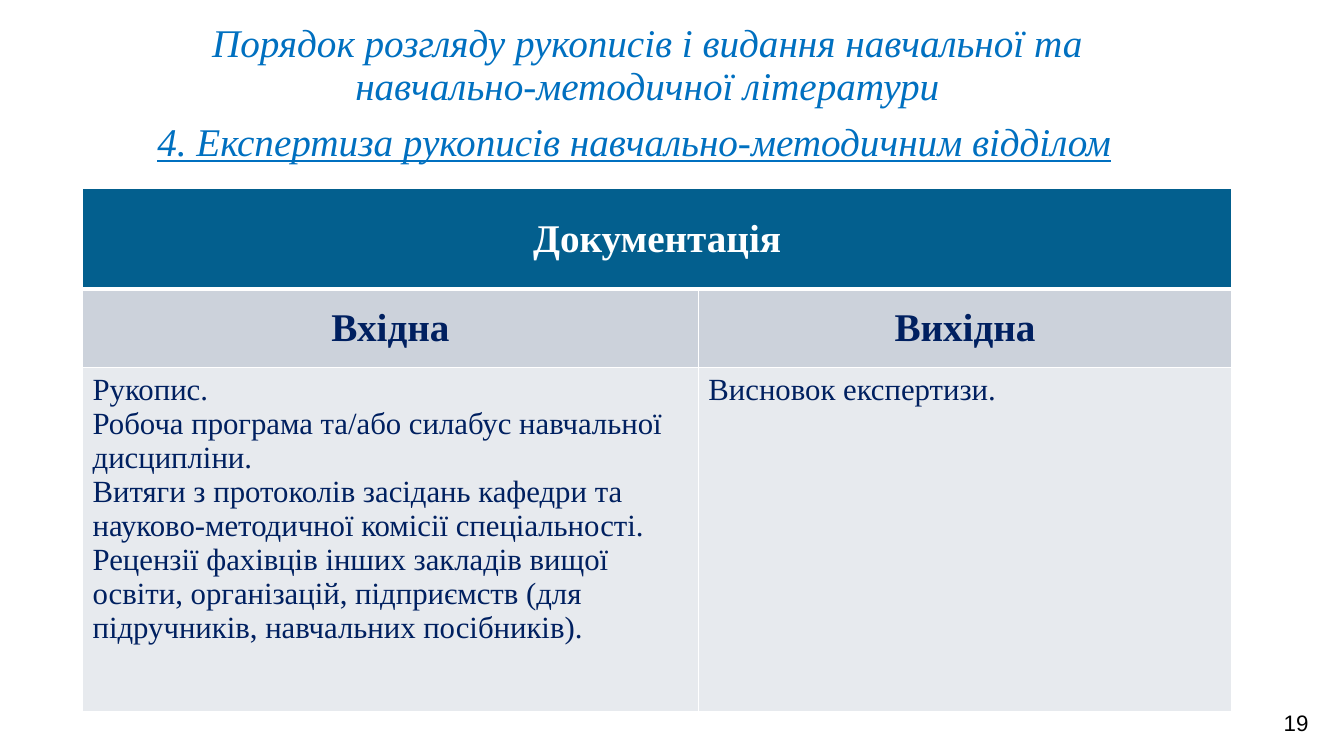
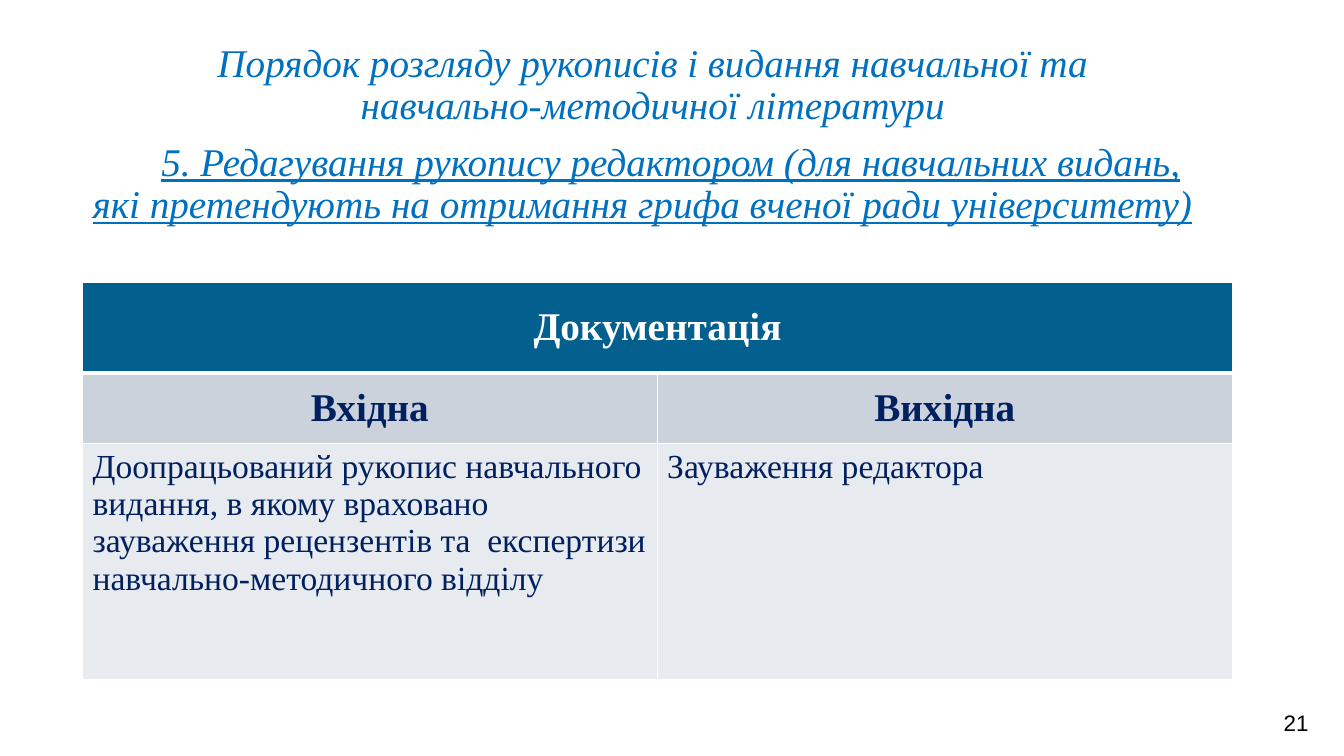
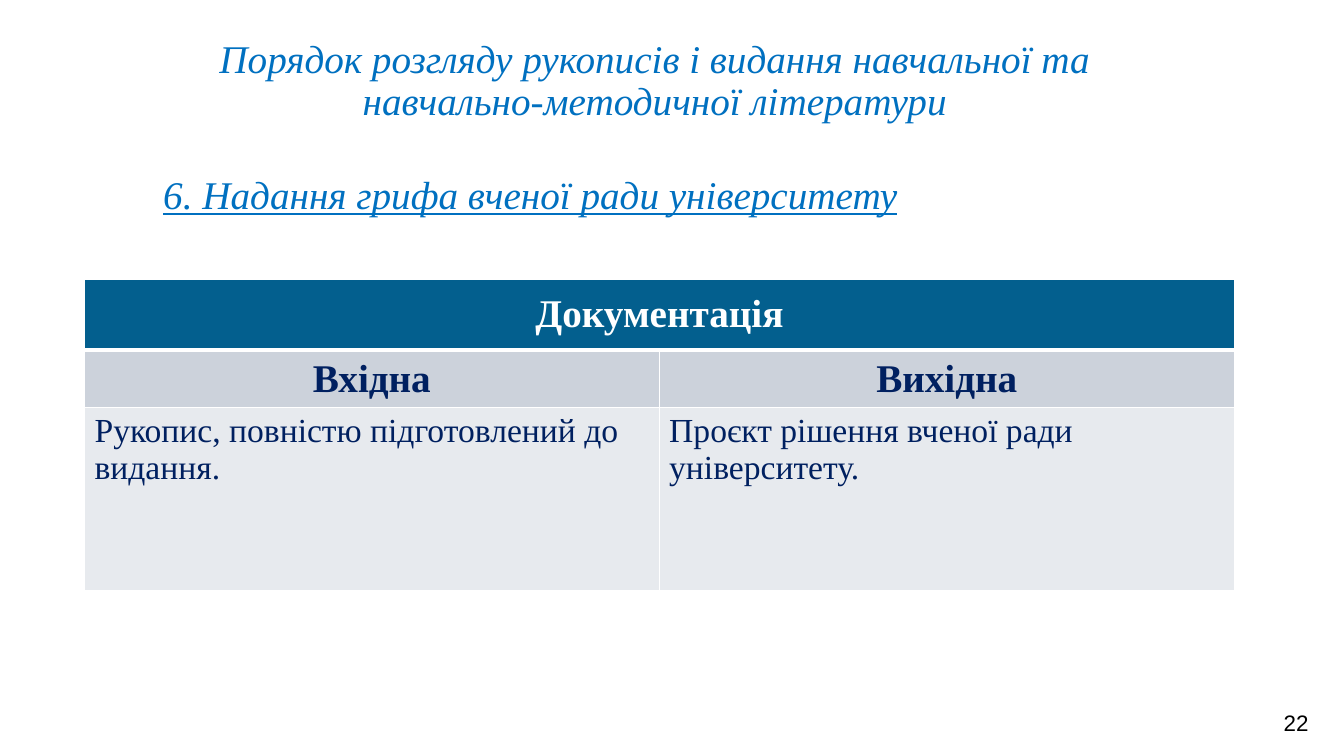
from lxml.etree import SubElement
from pptx import Presentation
from pptx.dml.color import RGBColor
from pptx.enum.text import MSO_ANCHOR, MSO_AUTO_SIZE, PP_ALIGN
from pptx.oxml.ns import qn
from pptx.util import Cm, Pt

BLUE, TEAL, NAVY, WHITE, BLACK = "0070C0", "035F8E", "002060", "FFFFFF", "000000"
ROW_FILLS = [TEAL, "CCD2DB", "E7EAEE"]
HEADING = "Порядок розгляду рукописів і видання навчальної та \vнавчально-методичної літератури "

STEPS = [
    {
        "number": "19",
        "title_box": (1.98, 0.48, 28.91, 3.99),
        "step": "4. Експертиза рукописів навчально-методичним відділом",
        "step_gap": 10,
        "table_at": (2.08, 4.75),
        "columns": [15.52, 13.44],
        "rows": [2.54, 1.98, 8.66],
        "body_size": 22,
        "incoming": [
            "Рукопис.",
            "Робоча програма та/або силабус навчальної дисципліни.",
            "Витяги з протоколів засідань кафедри та науково-методичної комісії спеціальності.",
            "Рецензії фахівців інших закладів вищої освіти, організацій, підприємств "
            "(для підручників, навчальних посібників).",
        ],
        "outgoing": ["Висновок експертизи."],
    },
    {
        "number": "21",
        "title_box": (2.08, 0.97, 28.98, 5.13),
        "step": "5. Редагування рукопису редактором (для навчальних видань, "
                "які претендують на отримання грифа вченої ради університету)",
        "step_gap": 10,
        "table_at": (2.08, 7.11),
        "columns": [14.48, 14.5],
        "rows": [2.29, 1.78, 5.94],
        "body_size": 24,
        "incoming": [
            "Доопрацьований рукопис навчального видання, в якому враховано "
            "зауваження рецензентів та  експертизи навчально-методичного відділу",
        ],
        "outgoing": ["Зауваження редактора"],
    },
    {
        "number": "22",
        "title_box": (2.13, 0.86, 28.98, 4.75),
        "step": "6. Надання грифа вченої ради університету",
        "step_gap": 37,
        "table_at": (2.13, 7.04),
        "columns": [14.48, 14.5],
        "rows": [1.78, 1.45, 4.62],
        "body_size": 24,
        "incoming": ["Рукопис, повністю підготовлений до видання."],
        "outgoing": ["Проєкт рішення вченої ради університету."],
    },
]


def write(frame, text, size=28, color=BLUE, font="Times New Roman", bold=False, italic=False,
          underline=False, align=PP_ALIGN.LEFT, spacing=1.0, before=0, indent=0):
    """Add a formatted paragraph, using the frame's first one while it is empty."""
    para = frame.add_paragraph() if frame.text else frame.paragraphs[0]
    para.text = text
    para.alignment = align
    para.line_spacing = spacing
    para.space_before = Pt(before)
    para._p.get_or_add_pPr().set("indent", str(Cm(indent)))
    for span in para.runs:
        span.font.name = font
        span.font.size = Pt(size)
        span.font.bold = bold
        span.font.italic = italic
        span.font.underline = underline
        span.font.color.rgb = RGBColor.from_string(color)


def add_borders(cell, widths):
    """Draw white borders; widths maps lnL, lnR, lnT and lnB to points."""
    properties = cell._tc.get_or_add_tcPr()
    for side, width in widths.items():
        line = SubElement(properties, qn(f"a:{side}"), w=str(Pt(width)))
        SubElement(SubElement(line, qn("a:solidFill")), qn("a:srgbClr"), val=WHITE)


deck = Presentation()
deck.slide_width, deck.slide_height = Cm(33.87), Cm(19.05)
# Line breaks in titles take their height from the master style.
title_style = deck.slide_master.element.find(f".//{qn('p:titleStyle')}//{qn('a:defRPr')}")
title_style.set("sz", "2800")

for step in STEPS:
    page = deck.slides.add_slide(deck.slide_layouts[5])

    title = page.shapes.title
    title.left, title.top, title.width, title.height = [Cm(length) for length in step["title_box"]]
    frame = title.text_frame
    frame.auto_size = MSO_AUTO_SIZE.NONE
    frame.vertical_anchor = MSO_ANCHOR.TOP
    write(frame, HEADING, italic=True, align=PP_ALIGN.CENTER, spacing=0.9)
    write(frame, step["step"], italic=True, underline=True, spacing=0.9,
          before=step["step_gap"], indent=1.73)

    left, top = step["table_at"]
    table = page.shapes.add_table(3, 2, Cm(left), Cm(top), Cm(sum(step["columns"])),
                                  Cm(sum(step["rows"]))).table
    for column, width in zip(table.columns, step["columns"]):
        column.width = Cm(width)
    for row, height in zip(table.rows, step["rows"]):
        row.height = Cm(height)
    table.cell(0, 0).merge(table.cell(0, 1))

    contents = [[["Документація"], []], [["Вхідна"], ["Вихідна"]],
                [step["incoming"], step["outgoing"]]]
    for row_index, row_contents in enumerate(contents):
        is_body = row_index == 2
        for column_index, lines in enumerate(row_contents):
            cell = table.cell(row_index, column_index)
            add_borders(cell, {"lnL": 1, "lnR": 1, "lnT": 3 if row_index == 1 else 1,
                               "lnB": 3 if row_index == 0 else 1})
            cell.fill.solid()
            cell.fill.fore_color.rgb = RGBColor.from_string(ROW_FILLS[row_index])
            cell.vertical_anchor = MSO_ANCHOR.TOP if is_body else MSO_ANCHOR.MIDDLE
            for line in lines:
                write(cell.text_frame, line, size=step["body_size"] if is_body else 28,
                      color=WHITE if row_index == 0 else NAVY, bold=not is_body,
                      align=PP_ALIGN.LEFT if is_body else PP_ALIGN.CENTER)

    number_box = page.shapes.add_textbox(Cm(31.85), Cm(17.75), Cm(1.63), Cm(0.94))
    number_box.text_frame.word_wrap = True
    write(number_box.text_frame, step["number"], size=16, color=BLACK, font="Arial",
          align=PP_ALIGN.CENTER)

deck.save("out.pptx")
